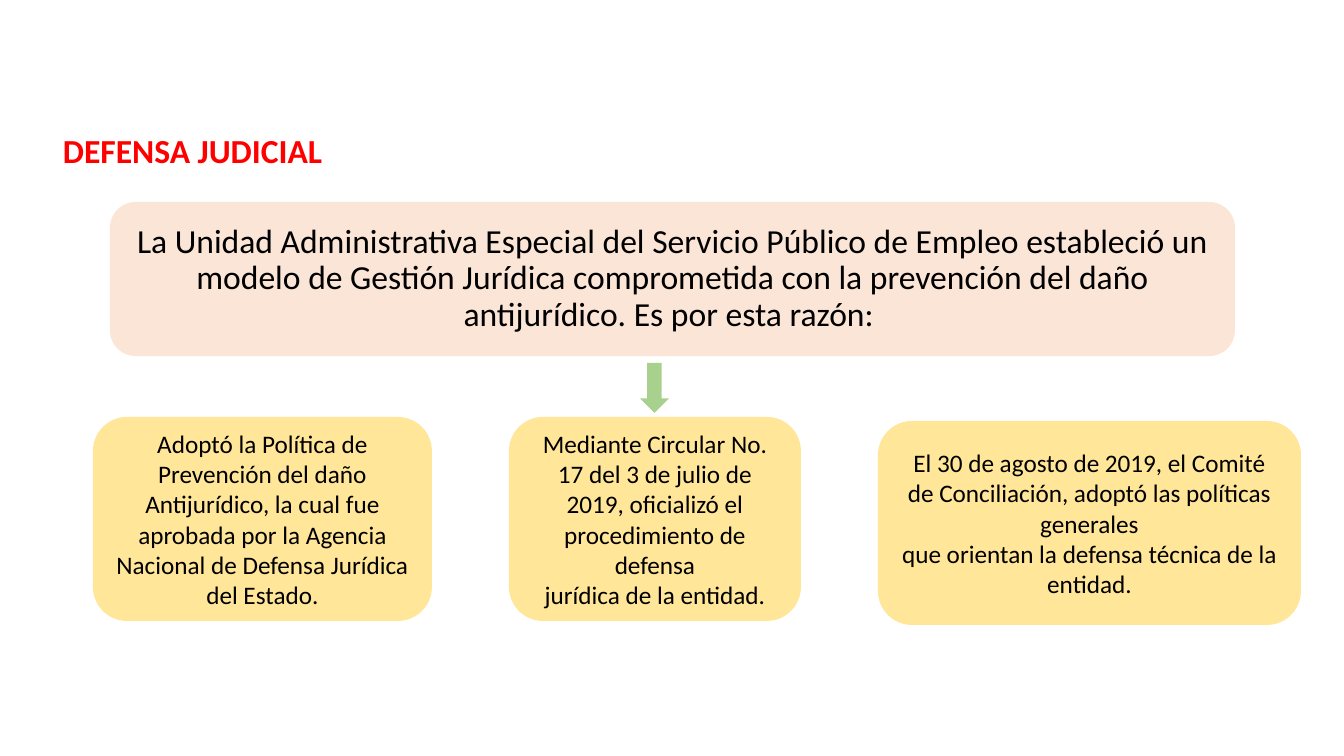
from dataclasses import dataclass

from pptx import Presentation
from pptx import util as u
from pptx.dml.color import RGBColor
from pptx.enum import shapes, text

EMU_PER_PX = 914400 / 100.8
FONT = "Calibri"
BLACK, RED = "000000", "FF0000"
PEACH, GREEN, YELLOW = "FBE5D6", "A9D18E", "FFE699"
ROUNDED = shapes.MSO_SHAPE.ROUNDED_RECTANGLE


@dataclass(frozen=True)
class Area:
    left: int
    top: int
    width: int
    height: int


@dataclass(frozen=True)
class Measure:
    area: Area
    paragraphs: tuple[str, ...]


INTRO = (
    "La Unidad Administrativa Especial del Servicio Público de Empleo estableció "
    "un modelo de Gestión Jurídica comprometida con la prevención del daño "
    "antijurídico. Es por esta razón: "
)
MEASURES = (
    Measure(Area(93, 417, 339, 204), (
        "Adoptó la Política de Prevención del daño Antijurídico, la cual fue "
        "aprobada por la Agencia Nacional de Defensa Jurídica del Estado.",
    )),
    Measure(Area(509, 417, 292, 204), (
        "Mediante Circular No. 17 del 3 de julio de 2019, oficializó el "
        "procedimiento de defensa",
        "jurídica de la entidad.",
    )),
    Measure(Area(878, 421, 423, 204), (
        "El 30 de agosto de 2019, el Comité de Conciliación, adoptó las "
        "políticas generales",
        "que orientan la defensa técnica de la entidad.",
    )),
)


def px(length: int) -> u.Emu:
    return u.Emu(round(length * EMU_PER_PX))


def bounds(area: Area) -> tuple[u.Emu, ...]:
    return tuple(px(n) for n in (area.left, area.top, area.width, area.height))


def colour(value: str) -> RGBColor:
    return RGBColor.from_string(value)


def add_block(page, kind, area: Area, fill: str):
    """Add a flat preset shape with no outline or shadow."""
    block = page.shapes.add_shape(kind, *bounds(area))
    block.shadow.inherit = False
    block.fill.solid()
    block.fill.fore_color.rgb = colour(fill)
    block.line.fill.background()
    return block


def write(box, *paragraphs: str, size: int, ink: str = BLACK, bold: bool = False,
          align=text.PP_ALIGN.CENTER, anchor=text.MSO_ANCHOR.MIDDLE,
          spacing: float = 1.0) -> None:
    frame = box.text_frame
    frame.word_wrap = True
    frame.vertical_anchor = anchor
    for index, words in enumerate(paragraphs):
        para = frame.add_paragraph() if index else frame.paragraphs[0]
        para.alignment = align
        para.line_spacing = spacing
        span = para.add_run()
        span.text = words
        span.font.name = FONT
        span.font.size = u.Pt(size)
        span.font.bold = bold
        span.font.color.rgb = colour(ink)


def main() -> None:
    deck = Presentation()
    deck.slide_width, deck.slide_height = px(1344), px(756)
    page = deck.slides.add_slide(deck.slide_layouts[6])

    intro = add_block(page, ROUNDED, Area(110, 202, 1125, 154), PEACH)
    write(intro, INTRO, size=24, spacing=0.9)

    add_block(page, shapes.MSO_SHAPE.DOWN_ARROW, Area(640, 363, 29, 50), GREEN)

    for measure in MEASURES:
        box = add_block(page, ROUNDED, measure.area, YELLOW)
        write(box, *measure.paragraphs, size=18)

    title = page.shapes.add_textbox(*bounds(Area(53, 125, 1113, 50)))
    write(title, "DEFENSA JUDICIAL", size=24, ink=RED, bold=True,
          align=text.PP_ALIGN.LEFT, anchor=text.MSO_ANCHOR.TOP)
    title.text_frame.auto_size = text.MSO_AUTO_SIZE.SHAPE_TO_FIT_TEXT

    deck.save("out.pptx")


if __name__ == "__main__":
    main()
